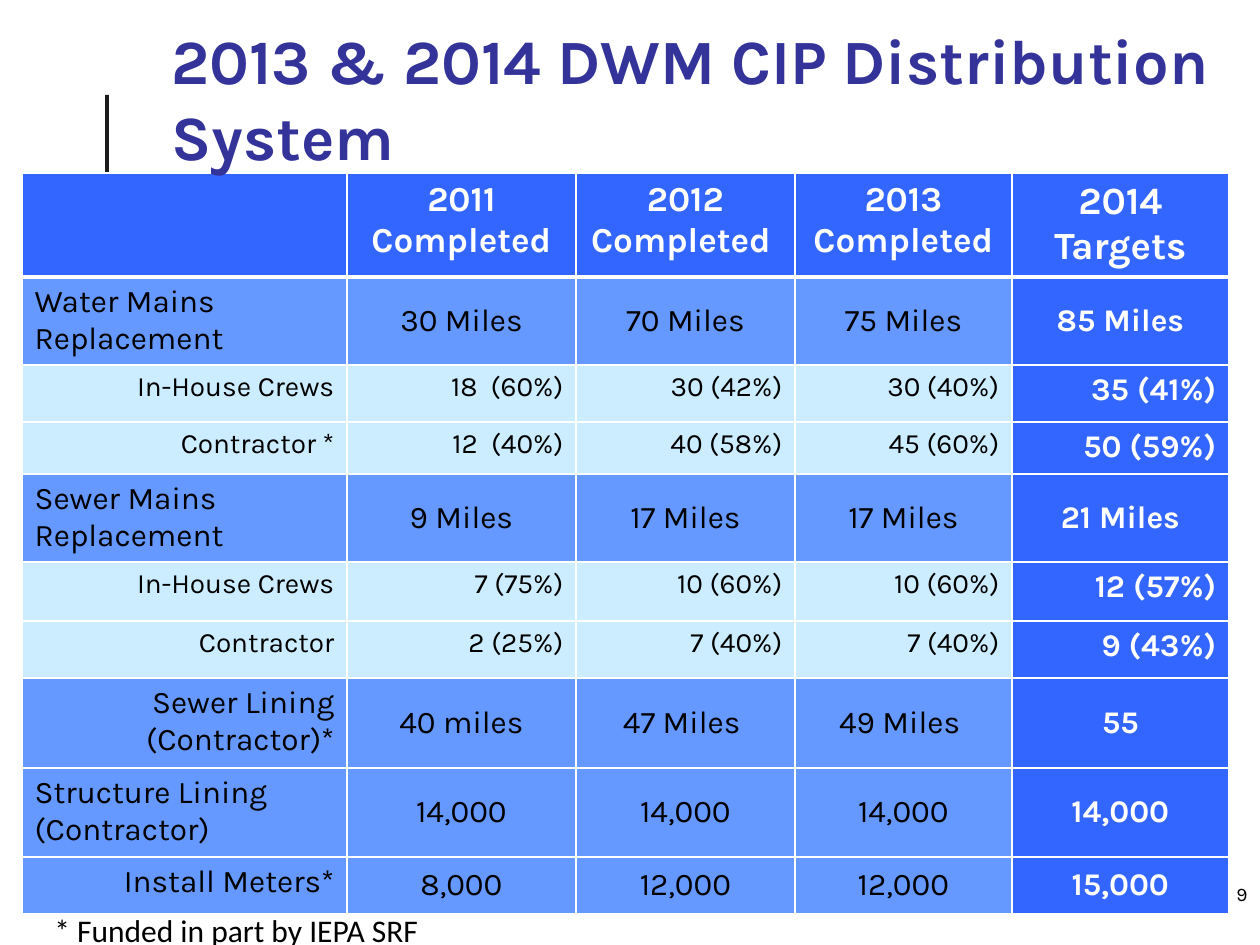
"""Build the slide of distribution system work completed and targeted by year."""
from dataclasses import dataclass

import lxml.etree
import pptx
import pptx.dml.color
import pptx.enum.shapes
import pptx.enum.text
import pptx.oxml.ns
import pptx.util

ALIGN = pptx.enum.text.PP_ALIGN
ANCHOR = pptx.enum.text.MSO_ANCHOR
qn = pptx.oxml.ns.qn


@dataclass(frozen=True)
class Theme:
    font: str = "Karla"
    note_font: str = "Calibri"
    title_color: str = "333399"
    strong: str = "3366FF"
    section: str = "6699FF"
    detail: str = "CCECFF"
    bar: str = "1C1C1C"
    black: str = "000000"
    white: str = "FFFFFF"
    title_size: int = 36
    target_size: int = 22
    header_size: int = 20
    body_size: int = 18
    detail_size: int = 16
    page_size: int = 11
    thin: int = 1
    thick: int = 3


THEME = Theme()


@dataclass(frozen=True)
class Style:
    size: int
    color: str = THEME.black
    bold: bool = False
    font: str = THEME.font
    align: ALIGN = ALIGN.LEFT
    anchor: ANCHOR = ANCHOR.TOP


@dataclass(frozen=True)
class TextBlock:
    text: str
    left: int
    top: int
    width: int
    height: int
    style: Style


@dataclass(frozen=True)
class WorkRow:
    height: int
    label: str
    values: tuple[str, ...]
    is_detail: bool = False
    label_align: ALIGN = ALIGN.LEFT


HEADER_HEIGHT = 104
HEADERS = ("", "2011\nCompleted", "2012\nCompleted ", "2013 Completed", "2014\nTargets")
COLUMN_WIDTHS = (325, 229, 219, 217, 217)
WORK_ROWS = (
    WorkRow(88, "Water Mains Replacement", ("30 Miles", "70 Miles", "75 Miles", "85 Miles")),
    WorkRow(57, "In-House Crews", ("18  (60%)", "30 (42%)", "30 (40%)", "35 (41%)"), True, ALIGN.RIGHT),
    WorkRow(52, "Contractor *", ("12  (40%)", "40 (58%)", "45 (60%)", "50 (59%)"), True, ALIGN.RIGHT),
    WorkRow(88, "Sewer Mains Replacement", ("9 Miles", "17 Miles", "17 Miles", "21 Miles")),
    WorkRow(59, "In-House Crews", ("7 (75%)", "10 (60%)", "10 (60%)", "12 (57%)"), True, ALIGN.RIGHT),
    WorkRow(57, "Contractor", ("2 (25%)", "7 (40%)", "7 (40%)", "9 (43%)"), True, ALIGN.RIGHT),
    WorkRow(90, "Sewer Lining (Contractor)*", ("40 miles", "47 Miles ", "49 Miles ", "55"),
            label_align=ALIGN.RIGHT),
    WorkRow(89, "Structure Lining (Contractor)", ("14,000", "14,000", "14,000", "14,000")),
    WorkRow(57, "Install Meters*", ("8,000", "12,000", "12,000", "15,000"), label_align=ALIGN.RIGHT),
)
TEXT_BLOCKS = (
    TextBlock("2013 & 2014 DWM CIP Distribution System", 159, 21, 1074, 158,
              Style(THEME.title_size, THEME.title_color, True, anchor=ANCHOR.BOTTOM)),
    TextBlock("9", 966, 876, 294, 50, Style(THEME.page_size, align=ALIGN.RIGHT)),
    TextBlock("* Funded in part by IEPA SRF", 42, 905, 829, 50,
              Style(THEME.body_size, font=THEME.note_font)),
)


def px(length: int) -> pptx.util.Emu:
    """Turn pixels into EMU."""
    return pptx.util.Emu(round(length * 914400 / 126))


def rgb(color: str) -> pptx.dml.color.RGBColor:
    """Turn a hex string into a colour."""
    return pptx.dml.color.RGBColor.from_string(color)


def write_text(frame, text: str, style: Style) -> None:
    """Write each line of the text as one paragraph with one run."""
    for index, line in enumerate(text.split("\n")):
        paragraph = frame.add_paragraph() if index else frame.paragraphs[0]
        paragraph.alignment = style.align
        run = paragraph.add_run()
        run.text = line
        run.font.name = style.font
        run.font.size = pptx.util.Pt(style.size)
        run.font.bold = style.bold
        run.font.color.rgb = rgb(style.color)


def draw_text_block(slide, block: TextBlock) -> None:
    """Draw a wrapped text box."""
    shape = slide.shapes.add_textbox(px(block.left), px(block.top), px(block.width), px(block.height))
    shape.text_frame.word_wrap = True
    shape.text_frame.vertical_anchor = block.style.anchor
    write_text(shape.text_frame, block.text, block.style)


def draw_bar(slide) -> None:
    """Draw the upright bar beside the title."""
    shape = slide.shapes.add_shape(
        pptx.enum.shapes.MSO_SHAPE.RECTANGLE, px(105), px(95), px(4), px(145))
    shape.shadow.inherit = False
    shape.fill.solid()
    shape.fill.fore_color.rgb = rgb(THEME.bar)
    shape.line.fill.background()


def set_borders(cell, top: int, bottom: int) -> None:
    """Give a cell white borders, with widths in points above and below."""
    properties = cell._tc.get_or_add_tcPr()
    widths = {"lnL": THEME.thin, "lnR": THEME.thin, "lnT": top, "lnB": bottom}
    for side, width in widths.items():
        line = lxml.etree.SubElement(properties, qn(f"a:{side}"), w=str(pptx.util.Pt(width)))
        fill = lxml.etree.SubElement(line, qn("a:solidFill"))
        lxml.etree.SubElement(fill, qn("a:srgbClr"), val=THEME.white)


def cell_look(row: int, column: int) -> tuple[str, Style]:
    """Return the fill and text style of a table cell."""
    is_target = column == len(HEADERS) - 1
    if row == 0:
        size = THEME.target_size if is_target else THEME.header_size
        return THEME.strong, Style(size, THEME.white, True, align=ALIGN.CENTER)
    work = WORK_ROWS[row - 1]
    align, anchor = ALIGN.CENTER, ANCHOR.MIDDLE
    if column == 0:
        align, anchor = work.label_align, ANCHOR.TOP
    elif work.is_detail:
        align, anchor = ALIGN.RIGHT, ANCHOR.TOP
    if is_target:
        return THEME.strong, Style(THEME.body_size, THEME.white, True, align=align, anchor=anchor)
    if work.is_detail:
        return THEME.detail, Style(THEME.detail_size, align=align, anchor=anchor)
    return THEME.section, Style(THEME.body_size, align=align, anchor=anchor)


def draw_table(slide) -> None:
    """Draw the table of work by year."""
    heights = (HEADER_HEIGHT, *(work.height for work in WORK_ROWS))
    contents = (HEADERS, *((work.label, *work.values) for work in WORK_ROWS))
    table = slide.shapes.add_table(len(heights), len(COLUMN_WIDTHS), px(22), px(173),
                                   px(sum(COLUMN_WIDTHS)), px(sum(heights))).table
    table.horz_banding = False
    for column, width in zip(table.columns, COLUMN_WIDTHS):
        column.width = px(width)
    for row, (height, texts) in enumerate(zip(heights, contents)):
        table.rows[row].height = px(height)
        for column, text in enumerate(texts):
            cell = table.cell(row, column)
            fill, style = cell_look(row, column)
            set_borders(cell, THEME.thick if row == 1 else THEME.thin,
                        THEME.thick if row == 0 else THEME.thin)
            cell.fill.solid()
            cell.fill.fore_color.rgb = rgb(fill)
            cell.vertical_anchor = style.anchor
            if text:
                write_text(cell.text_frame, text, style)


def main() -> None:
    """Build and save the presentation."""
    presentation = pptx.Presentation()
    presentation.slide_width, presentation.slide_height = px(1260), px(945)
    slide = presentation.slides.add_slide(presentation.slide_layouts[6])
    draw_bar(slide)
    draw_table(slide)
    for block in TEXT_BLOCKS:
        draw_text_block(slide, block)
    presentation.save("out.pptx")


if __name__ == "__main__":
    main()
